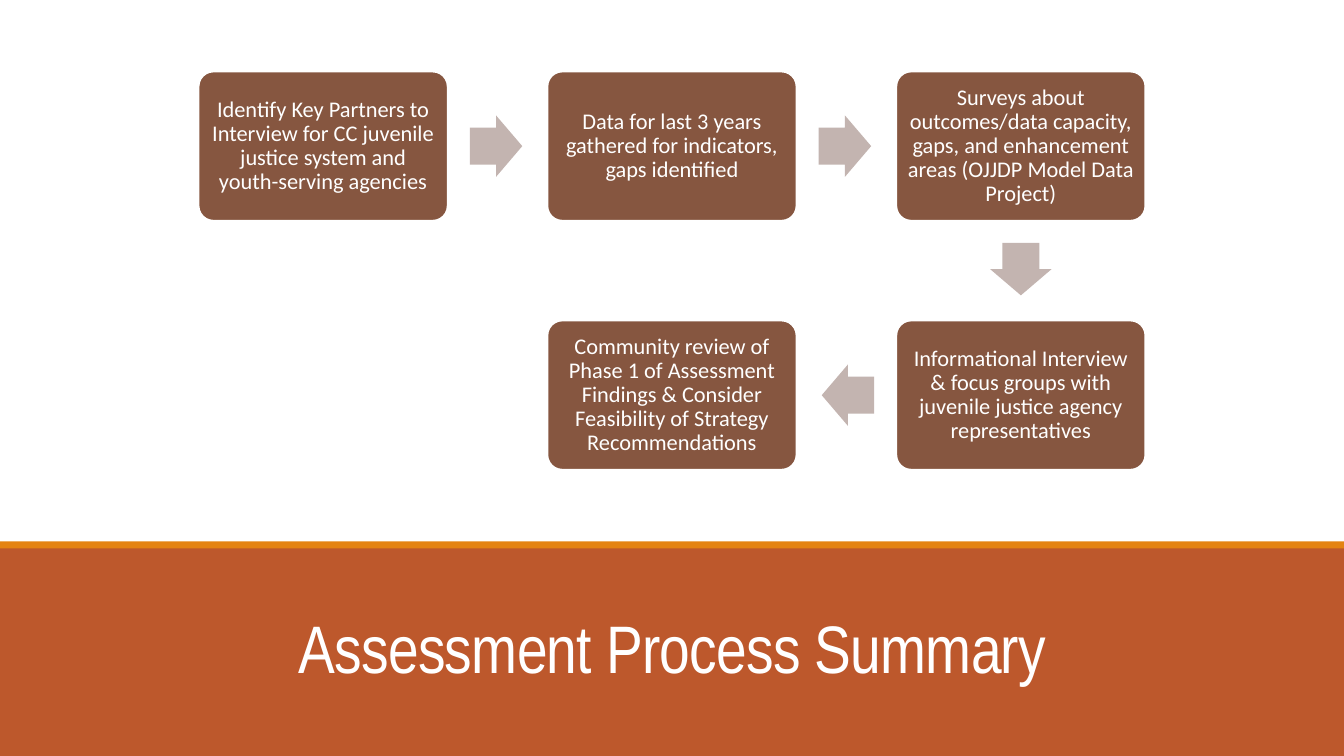
from pptx import Presentation
from pptx.dml.color import RGBColor
from pptx.enum import shapes, text
from pptx.util import Inches, Pt

COLORS = {
    "white": "FFFFFF",
    "band": "BD582C",
    "stripe": "E48312",
    "step": "865640",
    "arrow": "C3B4B0",
}
PAGE_W, PAGE_H = 13.33, 7.5
STEP_W, STEP_H = 2.47, 1.48
PITCH_X, PITCH_Y = 3.46, 2.47
ARROW_W, ARROW_H, ARROW_GAP = 0.52, 0.61, 0.22

# Column, row and wording of each step, in reading order of the flow
STEPS = [
    (0, 0, "Identify Key Partners to Interview for CC juvenile justice system "
           "and youth-serving agencies"),
    (1, 0, "Data for last 3 years gathered for indicators, gaps identified"),
    (2, 0, "Surveys about outcomes/data capacity, gaps, and enhancement areas "
           "(OJJDP Model Data Project)"),
    (2, 1, "Informational Interview & focus groups with juvenile justice "
           "agency representatives"),
    (1, 1, "Community review of Phase 1 of Assessment Findings & Consider "
           "Feasibility of Strategy Recommendations"),
]
# Rotation of an arrow by its direction in columns and rows
ROTATIONS = {(1, 0): 0, (0, 1): 90, (-1, 0): 180}


def rgb(name):
    return RGBColor.from_string(COLORS[name])


def add_block(page, kind, left, top, width, height, fill, line=None):
    block = page.shapes.add_shape(
        kind, Inches(left), Inches(top), Inches(width), Inches(height))
    block.shadow.inherit = False
    block.fill.solid()
    block.fill.fore_color.rgb = rgb(fill)
    if line:
        block.line.color.rgb = rgb(line)
        block.line.width = Pt(1.25)
    else:
        block.line.fill.background()
    return block


def write_text(box, words, font, size, spacing, anchor, inset=None, tracking=None):
    frame = box.text_frame
    frame.word_wrap = True
    frame.vertical_anchor = anchor
    if inset is not None:
        frame.margin_left = frame.margin_right = Inches(inset)
        frame.margin_top = frame.margin_bottom = Inches(inset)
    para = frame.paragraphs[0]
    para.alignment = text.PP_ALIGN.CENTER
    para.line_spacing = spacing
    span = para.add_run()
    span.text = words
    span.font.name = font
    span.font.size = Pt(size)
    span.font.color.rgb = rgb("white")
    if tracking is not None:
        span._r.get_or_add_rPr().set("spc", str(round(tracking * 100)))


def add_title_band(page, left, top, width, height):
    rectangle = shapes.MSO_SHAPE.RECTANGLE
    add_block(page, rectangle, left, top, width, height, "band")
    title = page.shapes.add_textbox(
        Inches(left + 1.17), Inches(top + 0.32), Inches(11), Inches(1.13))
    write_text(title, "Assessment Process Summary", "Arial Narrow", 48, 0.85,
               text.MSO_ANCHOR.BOTTOM, tracking=-0.5)
    add_block(page, rectangle, left, top - 0.05, width, 0.07, "stripe")


def add_step(page, left, top, words):
    step = add_block(page, shapes.MSO_SHAPE.ROUNDED_RECTANGLE,
                     left, top, STEP_W, STEP_H, "step", line="white")
    step.adjustments[0] = 0.1
    write_text(step, words, "Calibri", 16, 0.9, text.MSO_ANCHOR.MIDDLE, inset=0.07)


def add_flow_arrow(page, left, top, direction):
    """Place an arrow just outside the step at left, top, pointing away from it."""
    across, down = direction
    reach = ARROW_GAP + ARROW_W / 2
    center_x = left + STEP_W / 2 + across * (STEP_W / 2 + reach)
    center_y = top + STEP_H / 2 + down * (STEP_H / 2 + reach)
    arrow = add_block(page, shapes.MSO_SHAPE.RIGHT_ARROW, center_x - ARROW_W / 2,
                      center_y - ARROW_H / 2, ARROW_W, ARROW_H, "arrow")
    arrow.adjustments[0] = 0.6
    arrow.adjustments[1] = 0.5
    arrow.rotation = ROTATIONS[direction]


def add_process(page, left, top):
    for index, (column, row, words) in enumerate(STEPS):
        step_left = left + column * PITCH_X
        step_top = top + row * PITCH_Y
        add_step(page, step_left, step_top, words)
        if index + 1 < len(STEPS):
            next_column, next_row, _ = STEPS[index + 1]
            add_flow_arrow(page, step_left, step_top,
                           (next_column - column, next_row - row))


def main():
    deck = Presentation()
    deck.slide_width, deck.slide_height = Inches(PAGE_W), Inches(PAGE_H)
    page = deck.slides.add_slide(deck.slide_layouts[6])
    page.background.fill.solid()
    page.background.fill.fore_color.rgb = rgb("white")

    # Title band along the bottom
    add_title_band(page, 0, 5.42, PAGE_W, 2.08)
    # Process flow above it
    add_process(page, 1.97, 0.71)

    deck.save("out.pptx")


if __name__ == "__main__":
    main()
